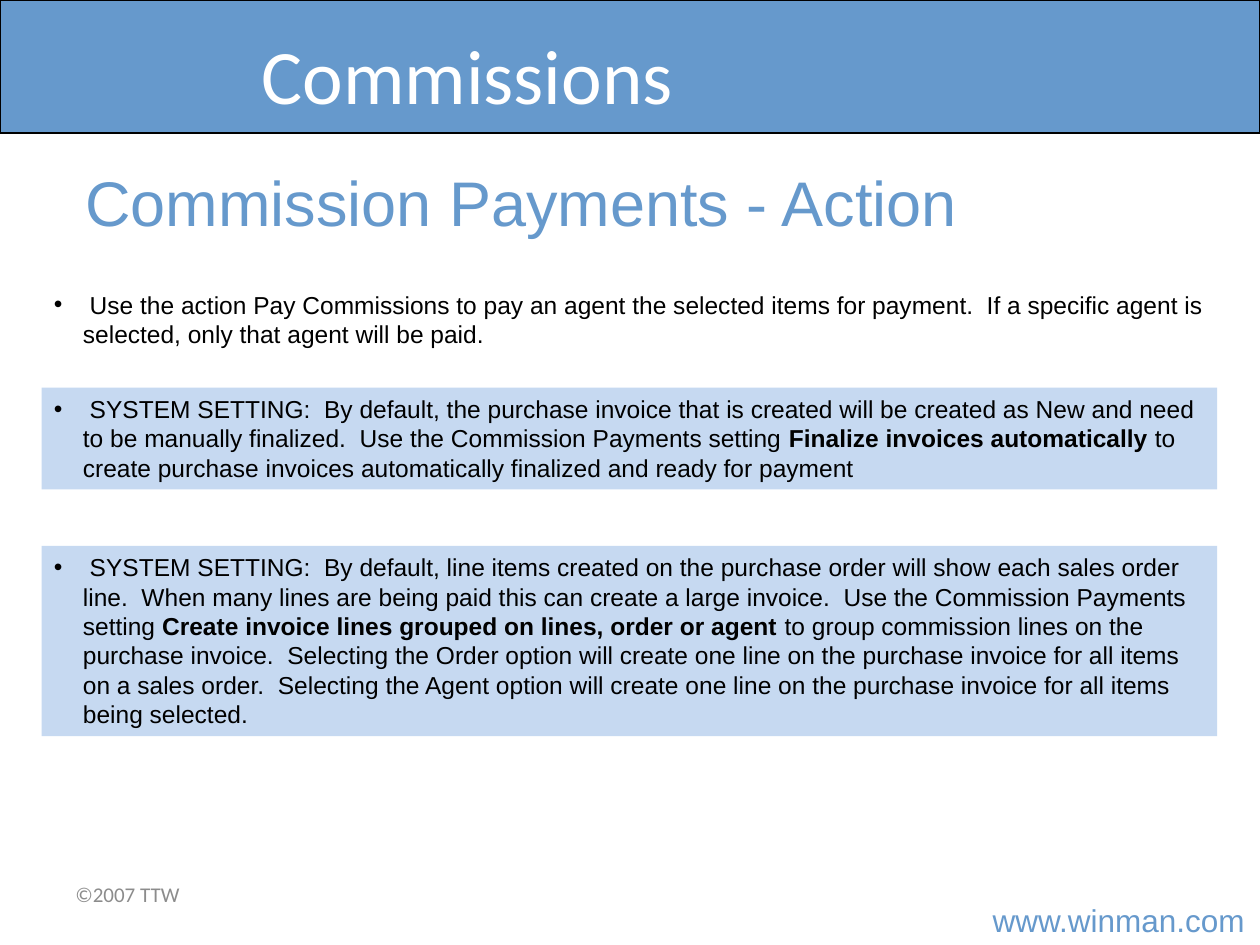
from lxml.etree import SubElement
from pptx import Presentation
from pptx.dml.color import RGBColor
from pptx.enum.shapes import MSO_SHAPE as Shape
from pptx.enum.text import MSO_ANCHOR as Anchor, PP_ALIGN as Align
from pptx.oxml.ns import qn
from pptx.util import Emu, Inches, Pt

BLUE = RGBColor(0x66, 0x99, 0xCC)
PALE = RGBColor(0xC6, 0xD9, 0xF1)
GREY = RGBColor(0x8C, 0x8C, 0x8C)
BLACK = RGBColor(0, 0, 0)
WHITE = RGBColor(0xFF, 0xFF, 0xFF)
HANG = Inches(0.23)

# Each note: top and height as shares of the body, fill, and (text, bold) runs
NOTES = [
    (0, 0.16, None, [
        (" Use the action Pay Commissions to pay an agent the selected items for "
         "payment.  If a specific agent is selected, only that agent will be paid.",
         False)]),
    (0.23, 0.225, PALE, [
        (" SYSTEM SETTING:  By default, the purchase invoice that is created will "
         "be created as New and need to be manually finalized.  Use the Commission "
         "Payments setting ", False),
        ("Finalize invoices automatically ", True),
        ("to create purchase invoices automatically finalized and ready for payment",
         False)]),
    (0.58, 0.42, PALE, [
        (" SYSTEM SETTING:  By default, line items created on the purchase order "
         "will show each sales order line.  When many lines are being paid this can "
         "create a large invoice.  Use the Commission Payments setting ", False),
        ("Create invoice lines grouped on lines, order or agent ", True),
        ("to group commission lines on the purchase invoice.  Selecting the Order "
         "option will create one line on the purchase invoice for all items on a "
         "sales order.  Selecting the Agent option will create one line on the "
         "purchase invoice for all items being selected.", False)]),
]


def part(box, x, y, w, h):
    """Return the part of a box given by shares of its size."""
    left, top, width, height = box
    return (Emu(int(left + x * width)), Emu(int(top + y * height)),
            Emu(int(w * width)), Emu(int(h * height)))


def block(slide, box, fill, line=None):
    """Add a plain rectangle."""
    rect = slide.shapes.add_shape(Shape.RECTANGLE, *box)
    rect.shadow.inherit = False
    rect.fill.solid()
    rect.fill.fore_color.rgb = fill
    if line is None:
        rect.line.fill.background()
    else:
        rect.line.color.rgb = line
        rect.line.width = Pt(0.75)
    return rect


def write(slide, text, box=None, shape=None, size=14, font="Arial", color=BLACK,
          align=Align.LEFT, anchor=Anchor.TOP, wrap=True, bullet=False):
    """Write a string or (text, bold) runs into a shape or a new text box."""
    shape = shape or slide.shapes.add_textbox(*box)
    frame = shape.text_frame
    frame.word_wrap = wrap
    frame.vertical_anchor = anchor
    para = frame.paragraphs[0]
    para.alignment = align
    if bullet:
        props = para._p.get_or_add_pPr()
        props.set("marL", str(HANG))
        props.set("indent", str(-HANG))
        SubElement(props, qn("a:buFont"), typeface="Arial")
        SubElement(props, qn("a:buChar"), char="•")
    for words, bold in [(text, False)] if isinstance(text, str) else text:
        run = para.add_run()
        run.text = words
        run.font.name = font
        run.font.size = Pt(size)
        run.font.bold = bold
        run.font.color.rgb = color


def header(slide, box):
    # Blue band with the title
    block(slide, box, BLUE, BLACK)
    write(slide, "Commissions", part(box, 0, 0.16, 0.742, 0.78), size=44,
          font="Calibri", color=WHITE, align=Align.CENTER, anchor=Anchor.MIDDLE)


def heading(slide, box):
    write(slide, "Commission Payments - Action", box, size=36, color=BLUE)


def body(slide, box):
    # Bulleted notes, the settings on a pale fill
    for top, height, fill, runs in NOTES:
        area = part(box, 0, top, 1, height)
        shape = block(slide, area, fill) if fill else None
        write(slide, runs, area, shape, bullet=True)


def footer(slide, box):
    # Copyright line and web address
    write(slide, "©2007 TTW", part(box, 0.05, 0, 0.233, 0.78), size=12,
          font="Calibri", color=GREY, anchor=Anchor.MIDDLE)
    write(slide, "www.winman.com", part(box, 0.778, 0.4, 0.222, 0.6), size=18,
          color=BLUE, wrap=False)


def main():
    deck = Presentation()
    deck.slide_width, deck.slide_height = Inches(10), Inches(7.5)
    slide = deck.slides.add_slide(deck.slide_layouts[6])
    page = (0, 0, deck.slide_width, deck.slide_height)
    header(slide, part(page, 0, 0, 1, 0.141))
    heading(slide, part(page, 0.058, 0.167, 0.85, 0.095))
    body(slide, part(page, 0.033, 0.3, 0.933, 0.479))
    footer(slide, part(page, 0, 0.911, 1, 0.089))
    deck.save("out.pptx")


if __name__ == "__main__":
    main()
